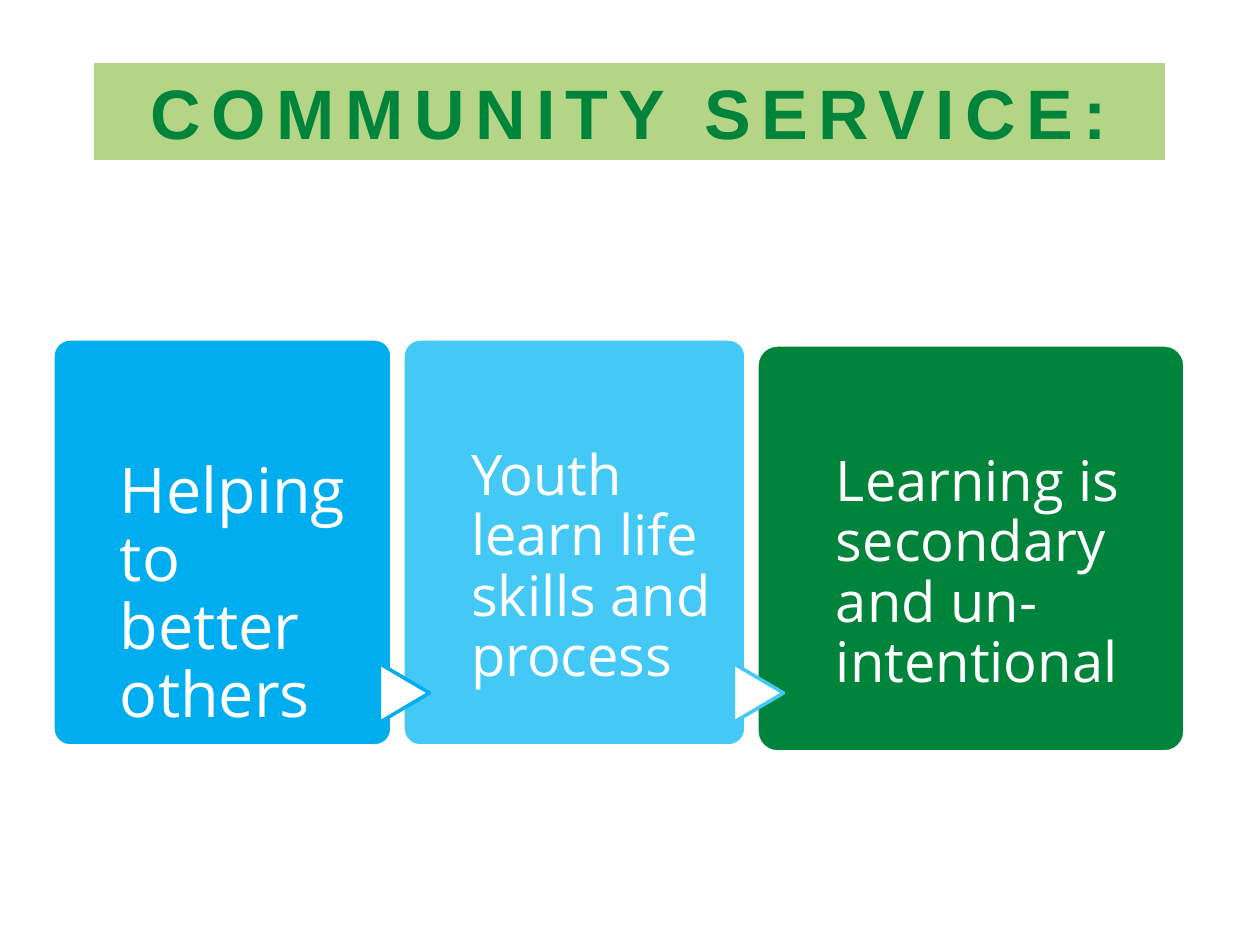
"""Build the community service slide: a title band and three linked cards."""
from pptx import Presentation, util as u
from pptx.dml.color import RGBColor
from pptx.enum import shapes, text

SCALE = u.Inches(1) // 126
WHITE = RGBColor(0xFF, 0xFF, 0xFF)
BLUE = RGBColor(0x00, 0xAE, 0xEF)
SKY = RGBColor(0x44, 0xC8, 0xF5)
GREEN = RGBColor(0x00, 0x83, 0x3B)
LIME = RGBColor(0xB4, 0xD5, 0x86)

TITLE = "COMMUNITY SERVICE:"
TITLE_BOX = (94, 63, 1071, 97)
CARDS = [
    dict(words="Helping to better others", fill=BLUE, size=36,
         box=(53, 339, 339, 407), indent=67, wording_width=252, drop=119),
    dict(words="Youth learn life skills and process", fill=SKY, size=32,
         box=(403, 339, 343, 407), indent=68, wording_width=256, drop=107),
    dict(words="Learning is secondary and un-intentional", fill=GREEN, size=32,
         box=(757, 345, 428, 407), indent=79, wording_width=320, drop=107),
]
ARROW_TOP, ARROW_WIDTH, ARROW_HEIGHT, ARROW_OVERLAP = 668, 59, 50, 28
LINE_PITCH = 1.08


def px(*lengths):
    return [u.Emu(length * SCALE) for length in lengths]


def add_outlined(slide, preset, box, fill, outline):
    outlined = slide.shapes.add_shape(preset, *px(*box))
    outlined.shadow.inherit = False
    outlined.fill.solid()
    outlined.fill.fore_color.rgb = fill
    outlined.line.color.rgb = outline
    outlined.line.width = u.Pt(2)
    return outlined


def style(run, font, size, color):
    run.font.name = font
    run.font.size = u.Pt(size)
    run.font.color.rgb = color


def add_title(slide):
    band = slide.shapes.title
    band.left, band.top, band.width, band.height = px(*TITLE_BOX)
    band.fill.solid()
    band.fill.fore_color.rgb = LIME
    frame = band.text_frame
    frame.auto_size = text.MSO_AUTO_SIZE.NONE
    frame.vertical_anchor = text.MSO_ANCHOR.MIDDLE
    heading = frame.paragraphs[0]
    heading.alignment = text.PP_ALIGN.CENTER
    run = heading.add_run()
    run.text = TITLE
    style(run, "Arial", 40, GREEN)
    run.font.bold = True
    run.font._element.set("spc", "600")


def add_wording(slide, card):
    left, top, _, height = card["box"]
    wording = slide.shapes.add_textbox(
        *px(left + card["indent"], top, card["wording_width"], height))
    frame = wording.text_frame
    frame.word_wrap = True
    frame.margin_left = frame.margin_right = frame.margin_bottom = 0
    frame.margin_top = px(card["drop"])[0]
    paragraph = frame.paragraphs[0]
    paragraph.alignment = text.PP_ALIGN.LEFT
    paragraph.line_spacing = u.Pt(card["size"] * LINE_PITCH)
    run = paragraph.add_run()
    run.text = card["words"]
    style(run, "Open Sans", card["size"], WHITE)


def main():
    deck = Presentation()
    deck.slide_width, deck.slide_height = px(1260, 945)
    slide = deck.slides.add_slide(deck.slide_layouts.get_by_name("Title Only"))
    add_title(slide)
    previous = None
    for card in CARDS:
        panel = add_outlined(slide, shapes.MSO_SHAPE.ROUNDED_RECTANGLE,
                             card["box"], card["fill"], WHITE)
        panel.adjustments[0] = 0.05
        if previous:
            arrow_box = (card["box"][0] - ARROW_OVERLAP, ARROW_TOP,
                         ARROW_WIDTH, ARROW_HEIGHT)
            arrow = add_outlined(slide, shapes.MSO_SHAPE.FLOWCHART_EXTRACT,
                                 arrow_box, WHITE, previous["fill"])
            arrow.rotation = 90
        add_wording(slide, card)
        previous = card
    deck.save("out.pptx")


if __name__ == "__main__":
    main()
